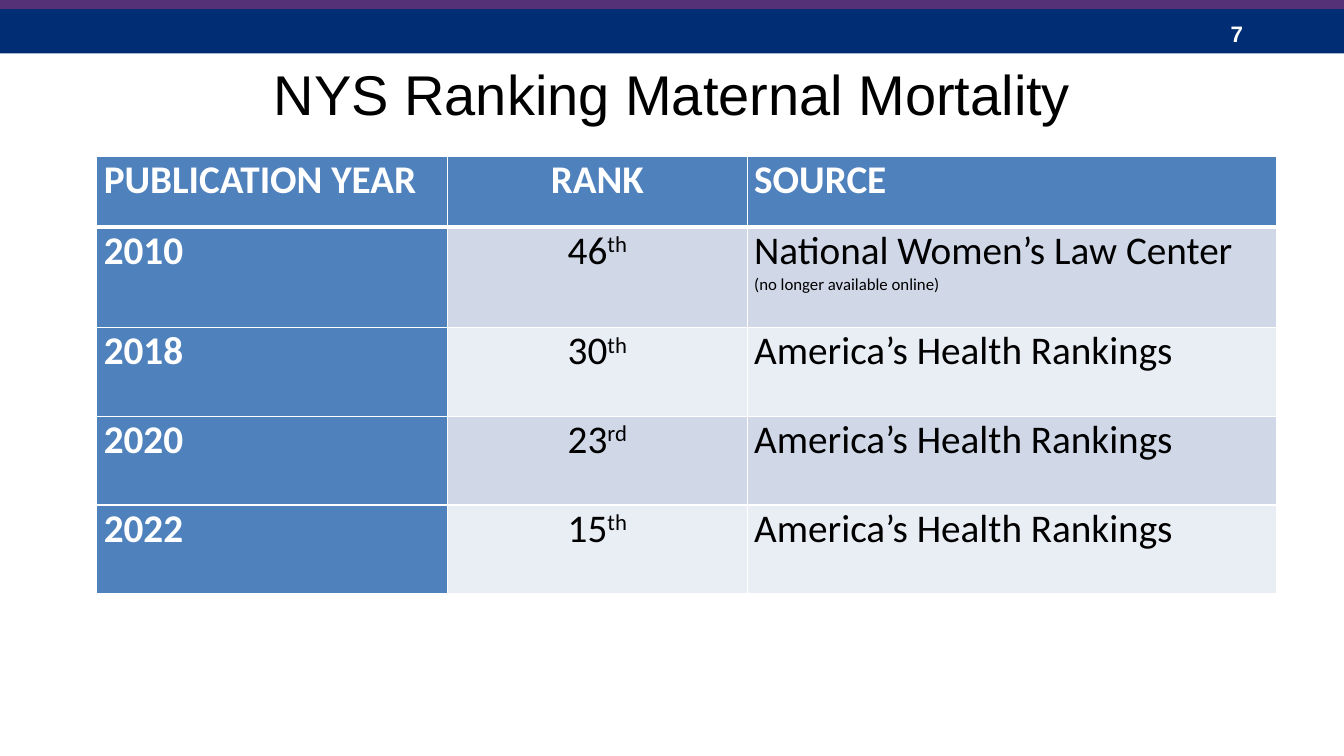
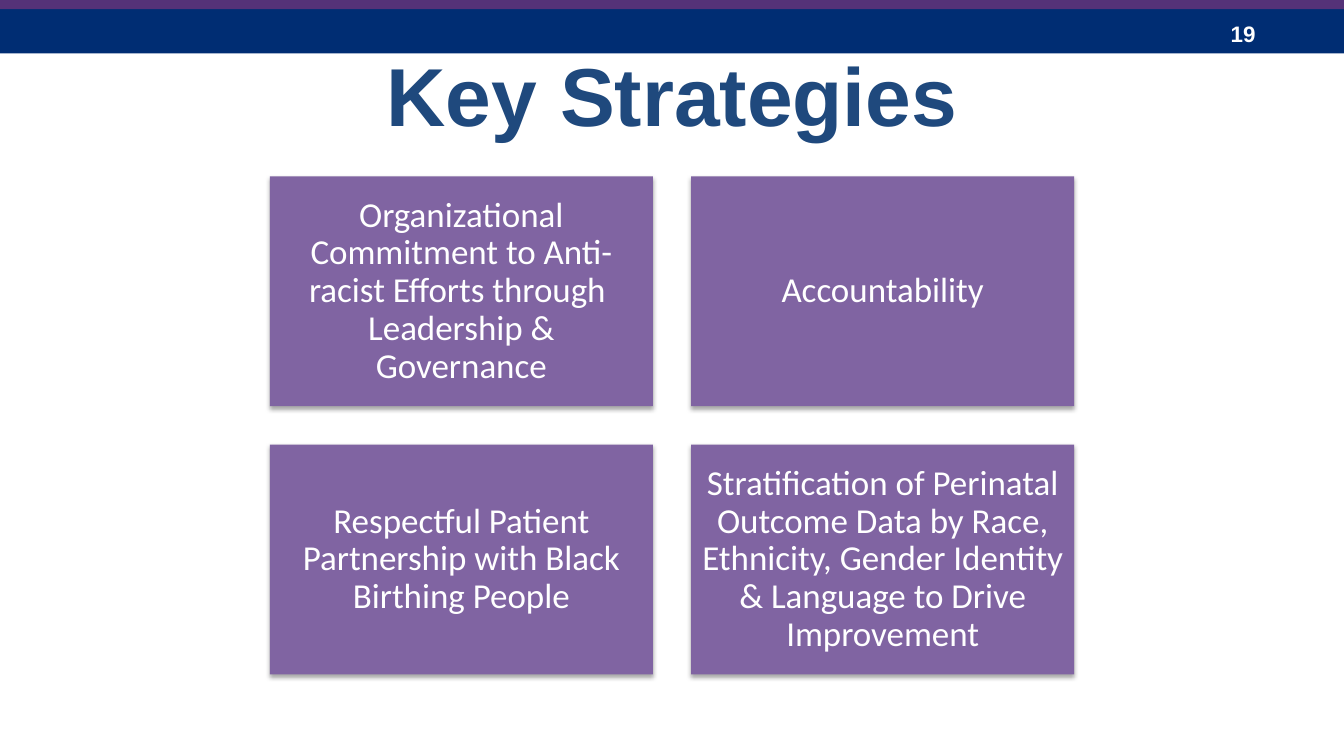
from dataclasses import dataclass
from itertools import product

from lxml.etree import SubElement
from pptx import Presentation
from pptx.dml.color import RGBColor as Rgb
from pptx.enum.shapes import MSO_SHAPE as Shape
from pptx.enum.text import MSO_ANCHOR as Anchor, PP_ALIGN as Align
from pptx.oxml.ns import qn
from pptx.util import Inches, Pt

GRID_COLUMNS, GRID_ROWS = 100, 75


@dataclass(frozen=True)
class Theme:
    heading_font: str = "Arial"
    body_font: str = "Calibri"
    white: str = "FFFFFF"
    black: str = "000000"
    navy: str = "002D73"
    plum: str = "553278"
    heading_blue: str = "1F497D"
    table_blue: str = "4F81BD"
    row_bands: tuple = ("D0D8E8", "E9EDF4")
    card_purple: str = "8064A2"
    number_size: float = 16
    title_size: float = 40
    big_title_size: float = 58.7
    table_size: float = 28
    note_size: float = 12
    card_size: float = 25


class Deck:
    """Holds the theme and the slide being built; lengths are grid columns and rows."""

    def __init__(self, theme):
        self.theme = theme
        self.presentation = Presentation()
        self.presentation.slide_width = Inches(13.333)
        self.presentation.slide_height = Inches(7.5)
        self.column = self.presentation.slide_width / GRID_COLUMNS
        self.row = self.presentation.slide_height / GRID_ROWS
        self.slide = None

    def area(self, left, top, width, height):
        return (round(left * self.column), round(top * self.row),
                round(width * self.column), round(height * self.row))

    def new_slide(self, number):
        theme = self.theme
        blank = self.presentation.slide_layouts[6]
        self.slide = self.presentation.slides.add_slide(blank)
        self.rectangle((0, 0.9, GRID_COLUMNS, 4.4), theme.navy)
        self.rectangle((0, 0, GRID_COLUMNS, 0.9), theme.plum)
        self.text((90.83, 1.3, 7.5, 4), str(number), theme.number_size,
                  theme.white, bold=True, align=Align.LEFT)

    def style(self, font, face, size, color, bold=False):
        font.name, font.size, font.bold = face, Pt(size), bold
        font.color.rgb = Rgb.from_string(color)

    def rectangle(self, place, color):
        shape = self.slide.shapes.add_shape(Shape.RECTANGLE, *self.area(*place))
        shape.shadow.inherit = False
        shape.fill.solid()
        shape.fill.fore_color.rgb = Rgb.from_string(color)
        shape.line.fill.background()
        return shape

    def text(self, place, words, size, color, bold=False, align=Align.CENTER):
        frame = self.slide.shapes.add_textbox(*self.area(*place)).text_frame
        frame.word_wrap = True
        frame.vertical_anchor = Anchor.MIDDLE
        frame.text = words
        frame.paragraphs[0].alignment = align
        self.style(frame.paragraphs[0].runs[0].font,
                   self.theme.heading_font, size, color, bold)

    def title(self, words, size, color, bold=False):
        self.text((5, 3, 90, 12.5), words, size, color, bold)

    def soft_shadow(self, shape):
        effects = shape._element.spPr.find(qn("a:effectLst"))
        shadow = SubElement(effects, qn("a:outerShdw"), blurRad=str(Pt(3.1)),
                            dist=str(Pt(1.8)), dir="5400000", rotWithShape="0")
        black = SubElement(shadow, qn("a:srgbClr"), val=self.theme.black)
        SubElement(black, qn("a:alpha"), val="35000")

    def card(self, place, words):
        theme = self.theme
        shape = self.rectangle(place, theme.card_purple)
        self.soft_shadow(shape)
        frame = shape.text_frame
        frame.word_wrap = True
        frame.vertical_anchor = Anchor.MIDDLE
        frame.margin_left = frame.margin_right = Inches(0.1)
        frame.margin_top = frame.margin_bottom = Inches(0.1)
        frame.text = words
        paragraph = frame.paragraphs[0]
        paragraph.alignment = Align.CENTER
        paragraph.line_spacing = 0.9
        for run in paragraph.runs:
            self.style(run.font, theme.body_font, theme.card_size, theme.white)

    def cards(self, top, width, height, gap, labels):
        """Lay four cards out two by two, centred across the slide."""
        gap_columns = gap * self.row / self.column
        left = (GRID_COLUMNS - 2 * width - gap_columns) / 2
        for (y, x), label in zip(product(range(2), repeat=2), labels):
            self.card((left + x * (width + gap_columns),
                       top + y * (height + gap), width, height), label)

    def borders(self, cell, row):
        properties = cell._tc.get_or_add_tcPr()
        widths = {"L": 1, "R": 1, "T": 3 if row == 1 else 1,
                  "B": 3 if row == 0 else 1}
        for side, width in widths.items():
            line = SubElement(properties, qn(f"a:ln{side}"), w=str(Pt(width)))
            fill = SubElement(line, qn("a:solidFill"))
            SubElement(fill, qn("a:srgbClr"), val=self.theme.white)

    def cell(self, cell, row, column, lines):
        """Fill a cell; a line given as a pair has its second part raised."""
        theme = self.theme
        heading = row == 0 or column == 0
        self.borders(cell, row)
        cell.fill.solid()
        cell.fill.fore_color.rgb = Rgb.from_string(
            theme.table_blue if heading else theme.row_bands[(row - 1) % 2])
        cell.margin_left = cell.margin_right = Inches(0.07)
        cell.margin_top = cell.margin_bottom = 0
        frame = cell.text_frame
        for index, line in enumerate(lines):
            paragraph = frame.add_paragraph() if index else frame.paragraphs[0]
            paragraph.alignment = Align.CENTER if column == 1 else Align.LEFT
            words, suffix = line if isinstance(line, tuple) else (line, "")
            paragraph.text = words
            if suffix:
                raised = paragraph.add_run()
                raised.text = suffix
                raised._r.get_or_add_rPr().set("baseline", "30000")
            for run in paragraph.runs:
                self.style(run.font, theme.body_font,
                           theme.note_size if index else theme.table_size,
                           theme.white if heading else theme.black, heading)

    def table(self, left, top, widths, heights, records):
        place = self.area(left, top, sum(widths), sum(heights))
        table = self.slide.shapes.add_table(len(heights), len(widths), *place).table
        table.first_row = table.horz_banding = False
        for column, width in zip(table.columns, widths):
            column.width = round(width * self.column)
        for row, height in zip(table.rows, heights):
            row.height = round(height * self.row)
        for row, record in enumerate(records):
            for column, lines in enumerate(record):
                self.cell(table.cell(row, column), row, column, lines)


def ranking_slide(deck):
    theme = deck.theme
    deck.new_slide(7)
    deck.title("NYS Ranking Maternal Mortality", theme.title_size, theme.black)
    health_rankings = ["America’s Health Rankings"]
    deck.table(7.2, 15.5, [26.1, 22.3, 39.4], [7, 10, 8.8, 8.8, 8.8], [
        (["PUBLICATION YEAR"], ["RANK"], ["SOURCE"]),
        (["2010"], [("46", "th")],
         ["National Women’s Law Center", "(no longer available online)"]),
        (["2018"], [("30", "th")], health_rankings),
        (["2020"], [("23", "rd")], health_rankings),
        (["2022"], [("15", "th")], health_rankings),
    ])


def strategies_slide(deck):
    theme = deck.theme
    deck.new_slide(19)
    deck.title("Key Strategies", theme.big_title_size, theme.heading_blue, bold=True)
    deck.cards(17.5, 28.5, 22.8, 3.8, [
        "Organizational Commitment to Anti-racist Efforts through \v"
        "Leadership & Governance",
        "Accountability",
        "Respectful Patient Partnership with Black Birthing People",
        "Stratification of Perinatal Outcome Data by Race, Ethnicity, "
        "Gender Identity & Language to Drive Improvement",
    ])


def main():
    deck = Deck(Theme())
    ranking_slide(deck)
    strategies_slide(deck)
    deck.presentation.save("out.pptx")


if __name__ == "__main__":
    main()
